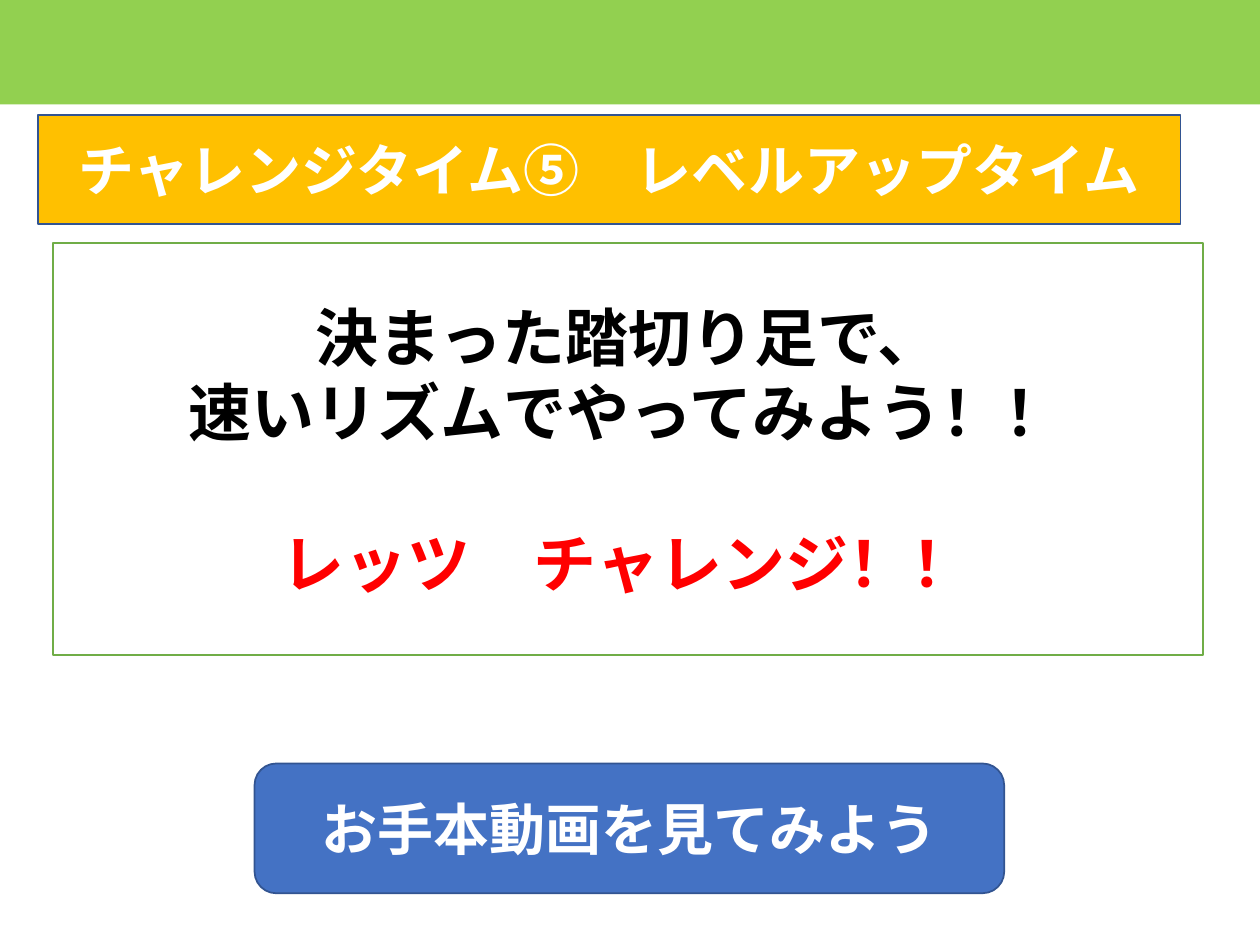
import pptx
import pptx.util
import pptx.dml.color
import pptx.enum.shapes
import pptx.enum.text

Inches, Pt = pptx.util.Inches, pptx.util.Pt
SHAPES = pptx.enum.shapes.MSO_SHAPE

HEADING = ["チャレンジタイム⑤　レベルアップタイム"]
MESSAGE = ["決まった踏切り足で、", "速いリズムでやってみよう！！"]
CHEER = ["レッツ　チャレンジ！！"]
VIDEO_PROMPT = ["お手本動画を見てみよう"]


def color(hex_code):
    return pptx.dml.color.RGBColor.from_string(hex_code)


def place(shape, box, fill, line=None):
    shape.left, shape.top, shape.width, shape.height = map(Inches, box)
    shape.fill.solid()
    shape.fill.fore_color.rgb = color(fill)
    if line:
        shape.line.color.rgb = color(line)
        shape.line.width = Pt(1)
    else:
        shape.line.fill.background()
    return shape


def add_panel(slide, kind, box, fill, line=None):
    panel = slide.shapes.add_shape(kind, *map(Inches, box))
    panel.shadow.inherit = False
    return place(panel, box, fill, line)


def write(shape, lines, size=32, ink="FFFFFF", gap=0):
    frame = shape.text_frame
    frame.word_wrap = True
    frame.auto_size = pptx.enum.text.MSO_AUTO_SIZE.NONE
    frame.vertical_anchor = pptx.enum.text.MSO_ANCHOR.MIDDLE
    for number, line in enumerate(lines):
        paragraph = frame.add_paragraph() if frame.text else frame.paragraphs[0]
        paragraph.alignment = pptx.enum.text.PP_ALIGN.CENTER
        paragraph.space_before = Pt(0 if number else gap)
        run = paragraph.add_run()
        run.text = line
        run.font.name = "Calibri"
        run.font.size = Pt(size)
        run.font.bold = True
        run.font.color.rgb = color(ink)


def main():
    deck = pptx.Presentation()
    deck.slide_width, deck.slide_height = Inches(10), Inches(7.5)
    slide = deck.slides.add_slide(deck.slide_layouts[5])

    add_panel(slide, SHAPES.RECTANGLE, (-0.02, 0, 10.02, 0.83), "92D050")

    heading = place(slide.shapes.title, (0.3, 0.91, 9.07, 0.87), "FFC000", "325491")
    write(heading, HEADING)

    message = add_panel(slide, SHAPES.RECTANGLE, (0.42, 1.93, 9.13, 3.27), "FFFFFF", "70AD47")
    write(message, MESSAGE, size=36, ink="000000")
    write(message, CHEER, size=36, ink="FF0000", gap=43)

    video_button = add_panel(
        slide, SHAPES.ROUNDED_RECTANGLE, (2.02, 6.06, 5.95, 1.03), "4472C4", "325491")
    write(video_button, VIDEO_PROMPT)

    deck.save("out.pptx")


if __name__ == "__main__":
    main()
